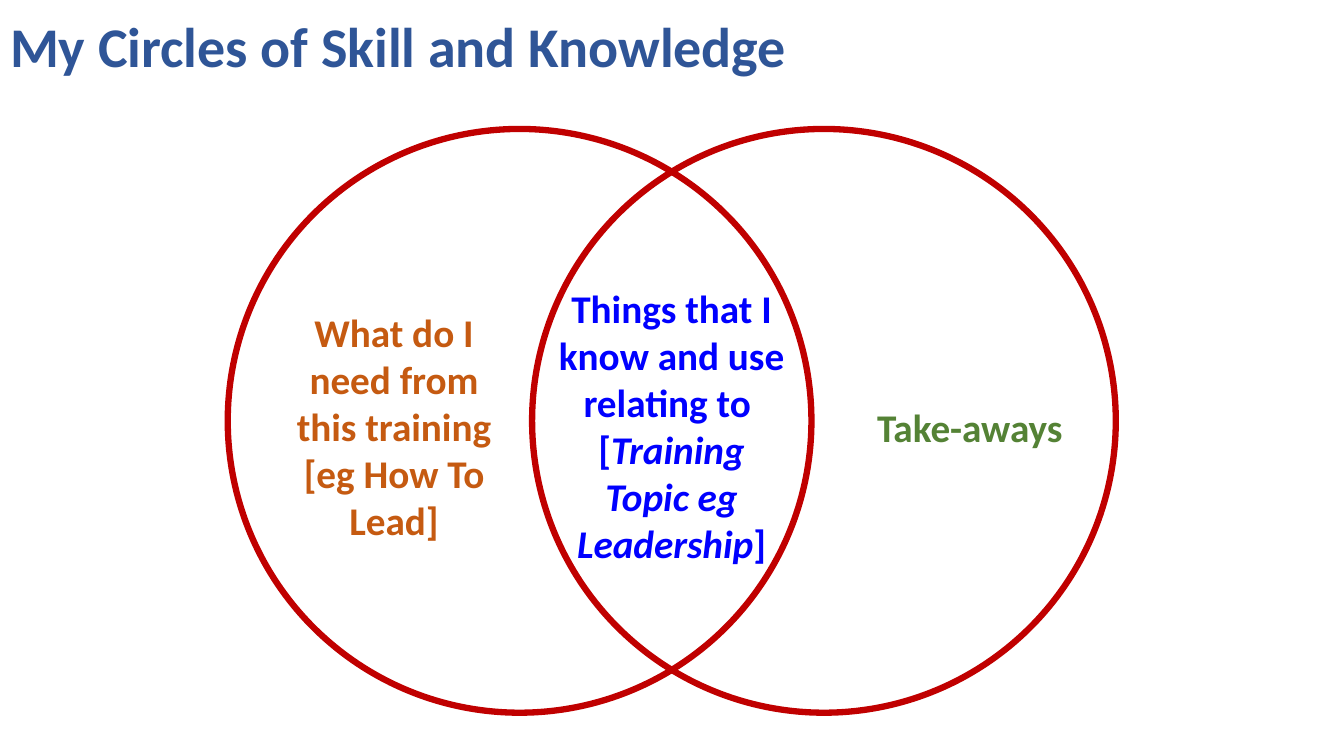
from pptx import Presentation
from pptx.dml.color import RGBColor
from pptx.enum import shapes, text
from pptx.util import Cm, Pt

COLORS = {
    "title": "2F5597",
    "circle": "C00000",
    "needs": "C55A11",
    "known": "0000FF",
    "takeaways": "548235",
}
TITLE = "My Circles of Skill and Knowledge"
TITLE_BOX = (0, 0, 29.62, 2.51)

CIRCLE_LEFTS = (5.74, 13.41)
CIRCLE_TOP = 3.25
CIRCLE_SIZE = 14.71

# Colour name, box (left, top, width, height) in cm, lines of (words, italic) runs
LABELS = [
    ("needs", (7.06, 7.65, 5.74, 6.25),
     [[("What do I need from this training [eg How To Lead]", False)]]),
    ("takeaways", (21.72, 10.03, 5.44, 1.45),
     [[("Take-aways", False)]]),
    ("known", (13.79, 7.04, 6.27, 7.44),
     [[("Things that I know and use relating to ", False)],
      [("[", False), ("Training Topic eg Leadership", True), ("]", False)]]),
]


def lengths(box):
    return [Cm(value) for value in box]


def write(paragraph, words, color, size=28, italic=False):
    run = paragraph.add_run()
    run.text = words
    font = run.font
    font.name = "Calibri"
    font.size = Pt(size)
    font.bold = True
    font.italic = italic
    font.color.rgb = RGBColor.from_string(COLORS[color])


def add_title(slide):
    title = slide.shapes.title
    title.left, title.top, title.width, title.height = lengths(TITLE_BOX)
    frame = title.text_frame
    frame.auto_size = text.MSO_AUTO_SIZE.NONE
    frame.vertical_anchor = text.MSO_ANCHOR.MIDDLE
    paragraph = frame.paragraphs[0]
    paragraph.alignment = text.PP_ALIGN.LEFT
    paragraph.line_spacing = 0.9
    paragraph.space_after = Pt(6)
    write(paragraph, TITLE, "title", size=40)


def add_circle(slide, left):
    box = lengths((left, CIRCLE_TOP, CIRCLE_SIZE, CIRCLE_SIZE))
    circle = slide.shapes.add_shape(shapes.MSO_SHAPE.OVAL, *box)
    circle.shadow.inherit = False
    circle.fill.background()
    circle.line.color.rgb = RGBColor.from_string(COLORS["circle"])
    circle.line.width = Pt(4.5)


def add_label(slide, color, box, lines):
    frame = slide.shapes.add_textbox(*lengths(box)).text_frame
    frame.word_wrap = True
    frame.auto_size = text.MSO_AUTO_SIZE.SHAPE_TO_FIT_TEXT
    paragraph = frame.paragraphs[0]
    paragraph.alignment = text.PP_ALIGN.CENTER
    for index, line in enumerate(lines):
        if index:
            paragraph.add_line_break()
        for words, italic in line:
            write(paragraph, words, color, italic=italic)


def main():
    presentation = Presentation()
    presentation.slide_width = Cm(33.87)
    presentation.slide_height = Cm(19.05)
    slide = presentation.slides.add_slide(presentation.slide_layouts[5])
    add_title(slide)
    for left in CIRCLE_LEFTS:
        add_circle(slide, left)
    for label in LABELS:
        add_label(slide, *label)
    presentation.save("out.pptx")


if __name__ == "__main__":
    main()
